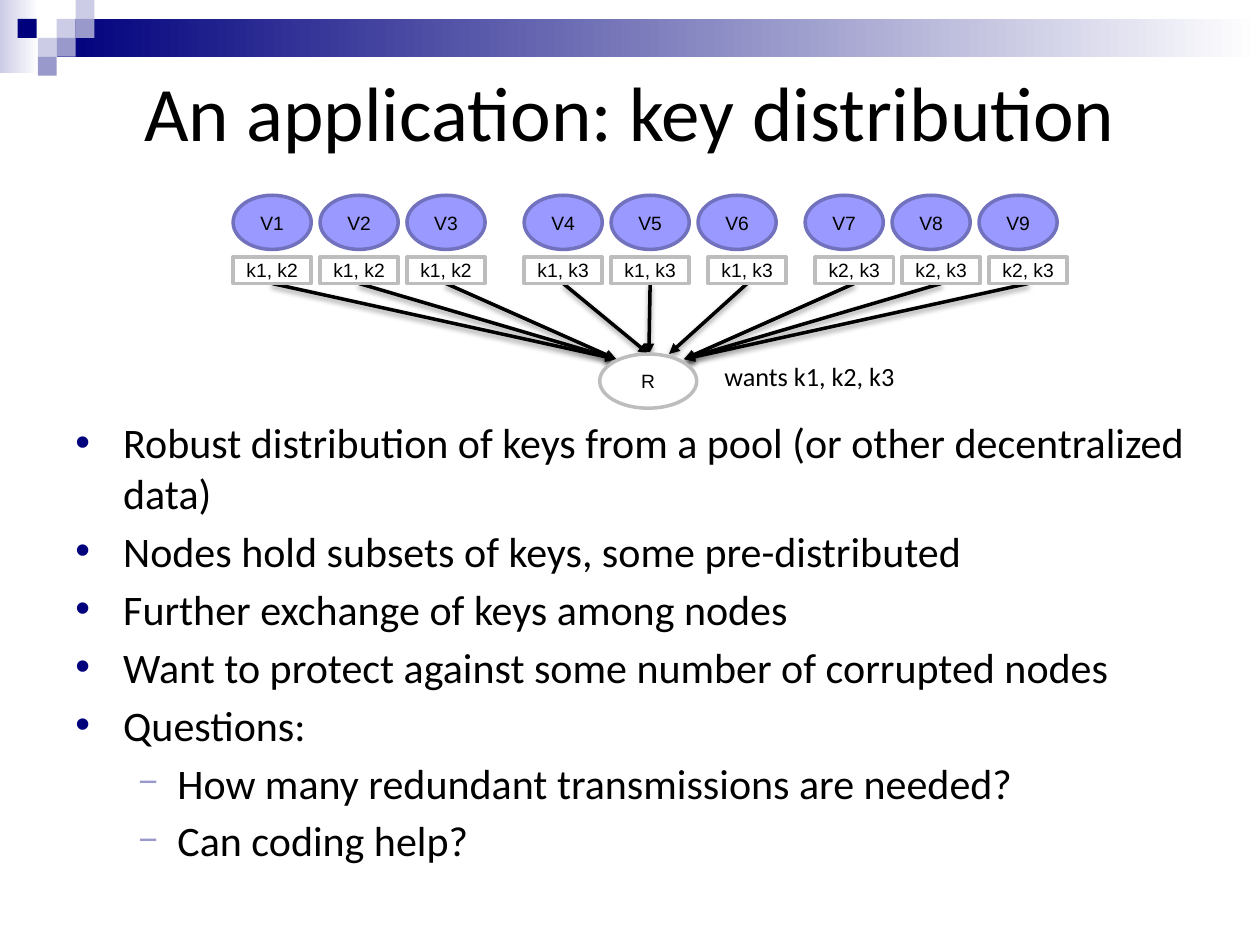
from lxml import etree
from pptx import Presentation
from pptx import util as u
from pptx.dml.color import RGBColor
from pptx.enum import shapes, text
from pptx.oxml import ns, parse_xml

NAVY = RGBColor(0x00, 0x00, 0x7D)
LAVENDER = RGBColor(0x99, 0x99, 0xCC)
PALE = RGBColor(0xCC, 0xCC, 0xE6)
NODE = RGBColor(0x99, 0x99, 0xFF)
NODE_EDGE = RGBColor(0x71, 0x71, 0xBD)
GREY = RGBColor(0xBD, 0xBD, 0xBD)
WHITE = RGBColor(0xFF, 0xFF, 0xFF)
BLACK = RGBColor(0x00, 0x00, 0x00)

TITLE = "An application: key distribution"
BANDS = [(0, 0, 0.31, 0.58, PALE), (0.45, 0.15, 9.55, 0.3, NAVY)]
TILE = 0.15
TILES = [(0.45, 0.15, PALE), (0.6, 0, PALE), (0.6, 0.15, LAVENDER),
         (0.3, 0.3, PALE), (0.14, 0.15, NAVY), (0.45, 0.3, LAVENDER),
         (0.3, 0.45, LAVENDER)]

LEFT, CENTRE, RIGHT = (4.89, 2.85), (5.15, 2.81), (5.43, 2.85)
GROUPS = [
    (1.85, "k1, k2", [0, 0, 0], [LEFT, LEFT, LEFT]),
    (4.16, "k1, k3", [0, 0, 0.08], [CENTRE, CENTRE, (5.31, 2.81)]),
    (6.39, "k2, k3", [0.08, 0.08, 0.08], [RIGHT, RIGHT, RIGHT]),
]
PITCH, NODE_W, NODE_H, KEY_H = 0.69, 0.62, 0.43, 0.21
NODE_TOP, KEY_TOP = 1.55, 2.04

BULLETS = [
    (0, "Robust distribution of keys from a pool (or other decentralized data)"),
    (0, "Nodes hold subsets of keys, some pre-distributed"),
    (0, "Further exchange of keys among nodes"),
    (0, "Want to protect against some number of corrupted nodes"),
    (0, "Questions:"),
    (1, "How many redundant transmissions are needed?"),
    (1, "Can coding help?"),
]
LEVELS = [(0.38, 0.38, "•", NAVY, 100), (0.81, 0.31, "−", LAVENDER, 80)]

SHADOW = (
    f'<a:effectLst {ns.nsdecls("a")}>'
    '<a:outerShdw blurRad="39370" dist="20320" dir="5400000" rotWithShape="0">'
    '<a:srgbClr val="000000"><a:alpha val="38000"/></a:srgbClr>'
    '</a:outerShdw></a:effectLst>'
)


def add_run(p, words, size, font):
    r = p.add_run()
    r.text = words
    r.font.size = u.Pt(size)
    r.font.name = font
    r.font.color.rgb = BLACK


def add_shape(s, kind, box, fill, edge=None, words=None):
    sp = s.shapes.add_shape(kind, *map(u.Inches, box))
    sp.shadow.inherit = False
    sp.fill.solid()
    sp.fill.fore_color.rgb = fill
    if edge is None:
        sp.line.fill.background()
    else:
        sp.line.color.rgb = edge
        sp.line.width = u.Pt(2)
    if words:
        tf = sp.text_frame
        tf.word_wrap = False
        tf.margin_left = tf.margin_right = tf.margin_top = tf.margin_bottom = 0
        tf.vertical_anchor = text.MSO_ANCHOR.MIDDLE
        p = tf.paragraphs[0]
        p.alignment = text.PP_ALIGN.CENTER
        add_run(p, words, 11, "Arial")
    return sp


def add_text(s, box, words, size, wrap):
    tf = s.shapes.add_textbox(*map(u.Inches, box)).text_frame
    tf.word_wrap = wrap
    tf.vertical_anchor = text.MSO_ANCHOR.MIDDLE
    p = tf.paragraphs[0]
    p.alignment = text.PP_ALIGN.CENTER
    add_run(p, words, size, "Calibri")


def add_arrow(s, start, end):
    line = s.shapes.add_connector(
        shapes.MSO_CONNECTOR.STRAIGHT, *map(u.Inches, start + end))
    line.line.color.rgb = BLACK
    line.line.width = u.Pt(2)
    etree.SubElement(line.line._get_or_add_ln(), ns.qn("a:tailEnd"), type="triangle")
    line._element.spPr.append(parse_xml(SHADOW))


def add_bullet(p, level, words):
    indent, hang, mark, color, scale = LEVELS[level]
    p.level = level
    p.space_before = u.Pt(4.3)
    pPr = p._p.get_or_add_pPr()
    pPr.set("marL", str(u.Inches(indent)))
    pPr.set("indent", str(-u.Inches(hang)))
    bu_color = etree.SubElement(pPr, ns.qn("a:buClr"))
    etree.SubElement(bu_color, ns.qn("a:srgbClr"), val=str(color))
    etree.SubElement(pPr, ns.qn("a:buSzPct"), val=str(scale * 1000))
    etree.SubElement(pPr, ns.qn("a:buFont"), typeface="Arial")
    etree.SubElement(pPr, ns.qn("a:buChar"), char=mark)
    add_run(p, words, 24, "Calibri")


def main():
    prs = Presentation()
    prs.slide_width, prs.slide_height = u.Inches(10), u.Inches(7.5)
    s = prs.slides.add_slide(prs.slide_layouts[6])
    rect, oval = shapes.MSO_SHAPE.RECTANGLE, shapes.MSO_SHAPE.OVAL

    for *box, color in BANDS:
        sp = add_shape(s, rect, box, color)
        sp.fill.gradient()
        sp.fill.gradient_angle = 0
        for stop, shade in zip(sp.fill.gradient_stops, (color, WHITE)):
            stop.color.rgb = shade
    for x, y, color in TILES:
        add_shape(s, rect, (x, y, TILE, TILE), color)

    add_text(s, (0.5, 0.13, 9, 1.5), TITLE, 44, True)

    keys, number = [], 0
    for left, label, shifts, targets in GROUPS:
        for i, (shift, target) in enumerate(zip(shifts, targets)):
            number += 1
            x = left + i * PITCH
            add_shape(s, oval, (x, NODE_TOP, NODE_W, NODE_H), NODE, NODE_EDGE, f"V{number}")
            add_arrow(s, (x + shift + NODE_W / 2, KEY_TOP + KEY_H), target)
            keys.append((x + shift, label))
    for x, label in keys:
        add_shape(s, rect, (x, KEY_TOP, NODE_W, KEY_H), WHITE, GREY, label)

    add_shape(s, oval, (4.76, 2.81, 0.77, 0.43), WHITE, GREY, "R")
    add_text(s, (5.64, 2.81, 1.57, 0.35), "wants k1, k2, k3", 15, False)

    tf = s.shapes.add_textbox(*map(u.Inches, (0.5, 3.26, 9.3, 3.75))).text_frame
    tf.word_wrap = True
    for i, (level, words) in enumerate(BULLETS):
        add_bullet(tf.add_paragraph() if i else tf.paragraphs[0], level, words)

    prs.save("out.pptx")


if __name__ == "__main__":
    main()
